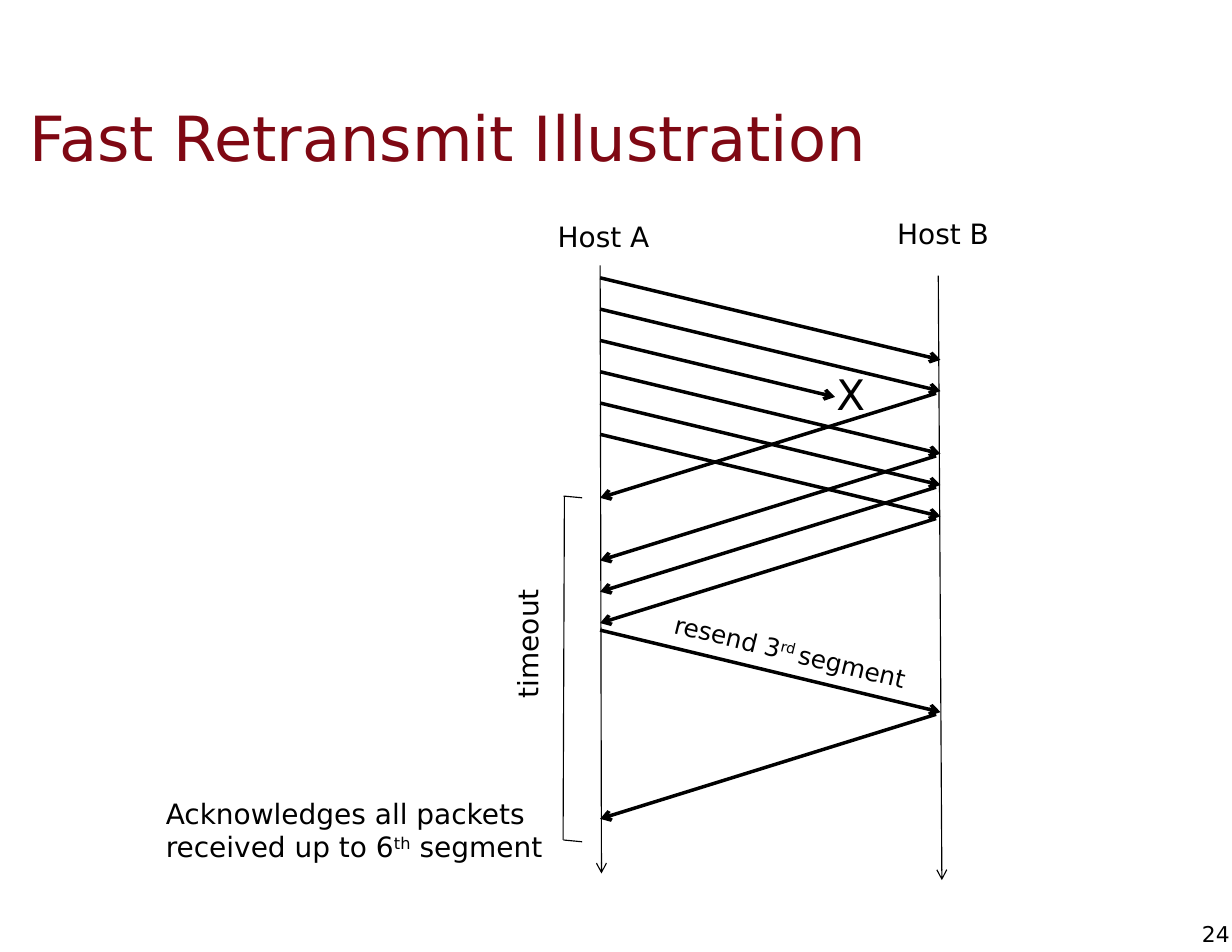
from lxml.etree import SubElement
from pptx import Presentation
from pptx.dml.color import RGBColor
from pptx.enum.shapes import MSO_CONNECTOR
from pptx.enum.text import MSO_ANCHOR, MSO_AUTO_SIZE, PP_ALIGN
from pptx.oxml.ns import qn
from pptx.util import Cm, Pt

BLACK = RGBColor(0x00, 0x00, 0x00)
MAROON = RGBColor(0x7F, 0x08, 0x13)
FACE = "DejaVu Sans"


def style(para, size, color=BLACK, align=PP_ALIGN.LEFT):
    """Set the font and alignment of a whole paragraph."""
    para.alignment = align
    para.font.name = FACE
    para.font.size = Pt(size)
    para.font.color.rgb = color


def label(slide, box, parts, size, align=PP_ALIGN.RIGHT, wrap=False, turn=0):
    """Add a text box; every second part is superscript."""
    shape = slide.shapes.add_textbox(*map(Cm, box))
    shape.rotation = turn
    frame = shape.text_frame
    frame.word_wrap = wrap
    frame.auto_size = MSO_AUTO_SIZE.SHAPE_TO_FIT_TEXT
    para = frame.paragraphs[0]
    for index, part in enumerate(parts):
        run = para.add_run()
        run.text = part
        if index % 2:
            run._r.get_or_add_rPr().set("baseline", "30000")
    style(para, size, align=align)
    return frame


def line(slide, start, end, width=2.25, head=True):
    """Draw a black straight line, with an open arrowhead if asked."""
    link = slide.shapes.add_connector(
        MSO_CONNECTOR.STRAIGHT, *map(Cm, (*start, *end)))
    link.line.color.rgb = BLACK
    link.line.width = Pt(width)
    if head:
        SubElement(link.line._get_or_add_ln(), qn("a:tailEnd"), type="arrow")
    SubElement(link._element.spPr, qn("a:effectLst"))


def heading(slide, box, text):
    """Place and format the title placeholder."""
    title = slide.shapes.title
    title.left, title.top, title.width, title.height = map(Cm, box)
    frame = title.text_frame
    frame.text = text
    frame.auto_size = MSO_AUTO_SIZE.NONE
    frame.vertical_anchor = MSO_ANCHOR.MIDDLE
    frame.margin_left = frame.margin_right = Cm(0.28)
    frame.margin_top = frame.margin_bottom = Cm(0.15)
    style(frame.paragraphs[0], 40, MAROON)


def hosts(slide, left, top, width):
    """Draw both host names and their time lines."""
    label(slide, (left - 1.27, top + 0.08, 2.64, 1.02), ["Host A"], 18)
    label(slide, (left + width - 1.29, top, 2.64, 1.02), ["Host B"], 18)
    line(slide, (left, top + 1.24), (left + 0.03, top + 15.03), 0.75)
    line(slide, (left + width - 0.05, top + 1.47),
         (left + width + 0.03, top + 15.18), 0.75)


def flow(slide, left, top, width):
    """Draw the segments sent by A and the replies of B."""
    drop, back, lost = 1.86, 2.37, 2
    starts = [top + 1.52 + 0.71 * step for step in range(6)]
    resend = top + 9.51
    for step, y in enumerate(starts + [resend]):
        part = 0.69 if step == lost else 1
        line(slide, (left, y), (left + part * width, y + part * drop))
    for y in [starts[1], *starts[3:], resend]:
        y += drop + 0.05
        line(slide, (left + width - 0.1, y), (left, y + back))
    label(slide, (left + 5.11, top + 3.45, 0.86, 1.88), ["X"], 27, wrap=True)
    label(slide, (left + 1.37, top + 9.57, 6.2, 0.94),
          ["resend 3", "rd ", "segment"], 16, PP_ALIGN.LEFT, True, 13.7)


def timeout(slide, left, top, height):
    """Draw the timeout bracket and its turned name."""
    low = top + height
    line(slide, (left, top), (left - 0.03, low), 0.75, False)
    for y in (top, low):
        line(slide, (left - 0.02, y), (left + 0.4, y + 0.04), 0.75, False)
    label(slide, (left - 2.34, top + 2.85, 3, 1.02), ["timeout"], 18, turn=270)


def number(slide, box, text):
    """Write the page number."""
    frame = label(slide, box, [text], 14)
    frame.vertical_anchor = MSO_ANCHOR.MIDDLE
    frame.margin_left = frame.margin_right = 0
    frame.margin_top = frame.margin_bottom = 0


def main():
    """Build the slide and save it."""
    deck = Presentation()
    deck.slide_width, deck.slide_height = Cm(27.94), Cm(21.59)
    slide = deck.slides.add_slide(deck.slide_layouts[5])
    heading(slide, (0.38, 1.78, 26.75, 2.64), "Fast Retransmit Illustration")
    number(slide, (27.03, 20.88, 0.86, 0.61), "24")
    hosts(slide, 13.61, 4.78, 7.72)
    flow(slide, 13.61, 4.78, 7.72)
    timeout(slide, 12.8, 11.25, 7.8)
    label(slide, (3.51, 17.93, 9.7, 1.8),
          ["Acknowledges all packets received up to 6", "th", " segment"],
          18, PP_ALIGN.LEFT, True)
    deck.save("out.pptx")


if __name__ == "__main__":
    main()
